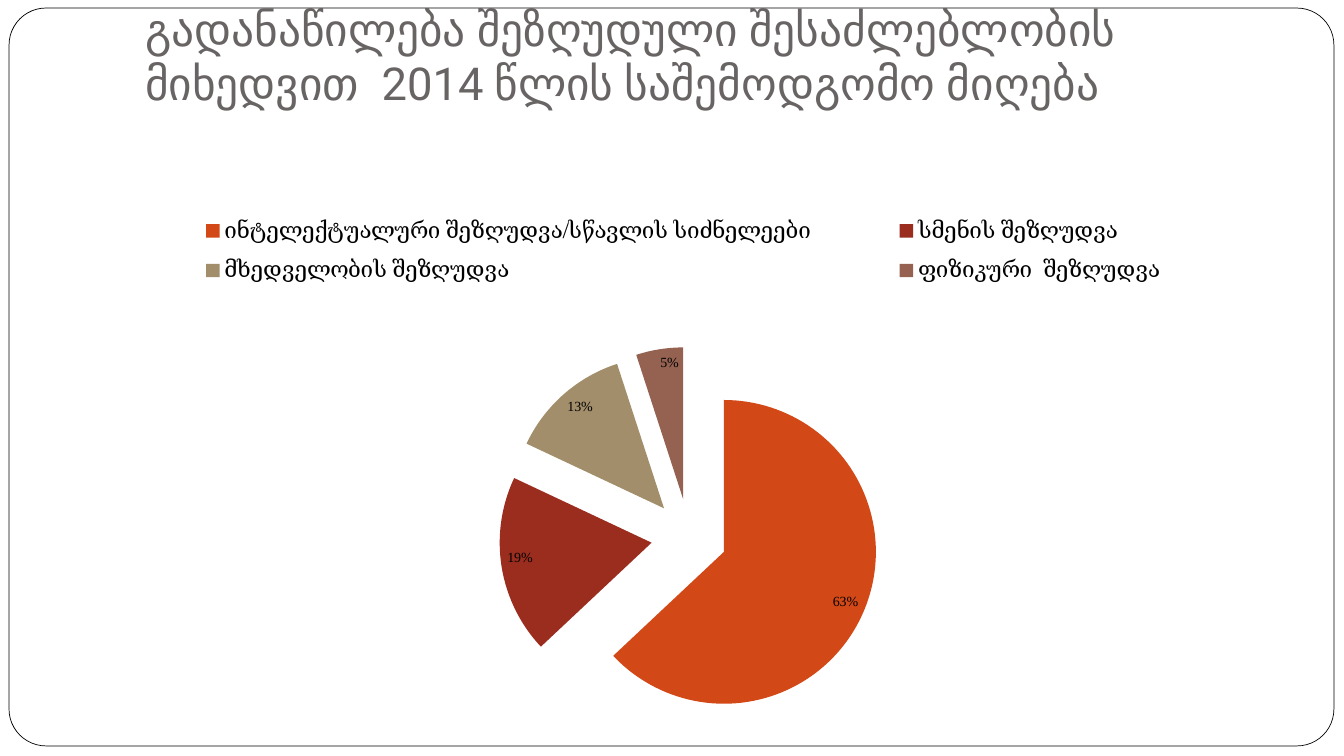
from lxml import etree
from pptx import Presentation
from pptx.chart.data import CategoryChartData
from pptx.dml.color import RGBColor
from pptx.enum.chart import XL_CHART_TYPE, XL_LABEL_POSITION, XL_LEGEND_POSITION
from pptx.enum.shapes import MSO_SHAPE
from pptx.enum.text import MSO_ANCHOR, PP_ALIGN
from pptx.oxml.ns import qn
from pptx.util import Inches, Pt

PIE = XL_CHART_TYPE.PIE
TOP = XL_LEGEND_POSITION.TOP
INNER_END = XL_LABEL_POSITION.INSIDE_END
ROUND = MSO_SHAPE.ROUNDED_RECTANGLE
BOTTOM = MSO_ANCHOR.BOTTOM
LEFT = PP_ALIGN.LEFT

COLORS = {"paper": "FFFFFF", "ink": "000000", "title": "696464"}
TITLE = "გადანაწილება შეზღუდული შესაძლებლობის მიხედვით  2014 წლის საშემოდგომო მიღება"
SHARES = [
    ("ინტელექტუალური შეზღუდვა/სწავლის სიძნელეები", 63, "D34817"),
    ("სმენის შეზღუდვა", 19, "9B2D1F"),
    ("მხედველობის შეზღუდვა", 13, "A28E6A"),
    ("ფიზიკური  შეზღუდვა", 5, "956251"),
]
PLOT = {"layoutTarget": "inner", "xMode": "edge", "yMode": "edge",
        "x": 0.08, "y": 0.31, "w": 0.84, "h": 0.69}
LEGEND = {"xMode": "edge", "yMode": "edge",
          "x": 0.03, "y": 0.05, "w": 0.93, "h": 0.17}


def rgb(name):
    """Return the named colour."""
    return RGBColor.from_string(COLORS[name])


def add_frame(slide, box):
    """Draw the rounded border of the slide."""
    frame = slide.shapes.add_shape(ROUND, *map(Inches, box))
    frame.shadow.inherit = False
    frame.adjustments[0] = 0.05
    frame.fill.solid()
    frame.fill.fore_color.rgb = rgb("paper")
    frame.line.color.rgb = rgb("ink")
    frame.line.width = Pt(0.5)


def add_title(slide, box):
    """Write the heading on the lower edge of its box."""
    text = slide.shapes.add_textbox(*map(Inches, box)).text_frame
    text.word_wrap = True
    text.vertical_anchor = BOTTOM
    text.margin_top = 0
    text.margin_bottom = Inches(0.46)
    para = text.paragraphs[0]
    para.text = TITLE
    para.alignment = LEFT
    para.font.name = "Roboto"
    para.font.size = Pt(32.4)
    para.font.color.rgb = rgb("title")


def set_layout(part, rules, spot):
    """Fix a chart part in fractions of the chart."""
    for old in part.findall(qn("c:layout")):
        part.remove(old)
    layout = etree.Element(qn("c:layout"))
    part.insert(spot, layout)
    manual = etree.SubElement(layout, qn("c:manualLayout"))
    for tag, val in rules.items():
        etree.SubElement(manual, qn("c:" + tag)).set("val", str(val))


def add_pie(slide, box):
    """Add the exploded pie with its legend and percent labels."""
    data = CategoryChartData()
    data.categories = [name for name, _, _ in SHARES]
    data.add_series("Series 1", [share for _, share, _ in SHARES])
    chart = slide.shapes.add_chart(PIE, *map(Inches, box), data).chart
    chart.has_title = False
    chart.font.name = "Times New Roman"
    chart.font.size = Pt(10)
    chart.font.color.rgb = rgb("ink")
    chart.has_legend = True
    chart.legend.position = TOP
    chart.legend.include_in_layout = False
    chart.legend.font.size = Pt(16)
    space = chart._chartSpace
    set_layout(space.find(".//" + qn("c:plotArea")), PLOT, 0)
    set_layout(space.find(".//" + qn("c:legend")), LEGEND, 1)

    plot = chart.plots[0]
    plot.vary_by_categories = True
    series = plot.series[0]
    burst = etree.Element(qn("c:explosion"), val="25")
    series._element.find(qn("c:tx")).addnext(burst)
    for i, (_, _, color) in enumerate(SHARES):
        fill = series.points[i].format.fill
        fill.solid()
        fill.fore_color.rgb = RGBColor.from_string(color)

    plot.has_data_labels = True
    labels = plot.data_labels
    labels.show_value = False
    labels.show_percentage = True
    labels.number_format = "0%"
    labels.number_format_is_linked = False
    labels.position = INNER_END


def main():
    """Build and save the slide."""
    deck = Presentation()
    deck.slide_width = Inches(13.33)
    deck.slide_height = Inches(7.5)
    slide = deck.slides.add_slide(deck.slide_layouts[6])
    add_frame(slide, (0.09, 0.08, 13.14, 7.32))
    add_title(slide, (1.34, 0.3, 11.33, 1.25))
    add_pie(slide, (0.89, 1.75, 11.89, 5.46))
    deck.save("out.pptx")


if __name__ == "__main__":
    main()
